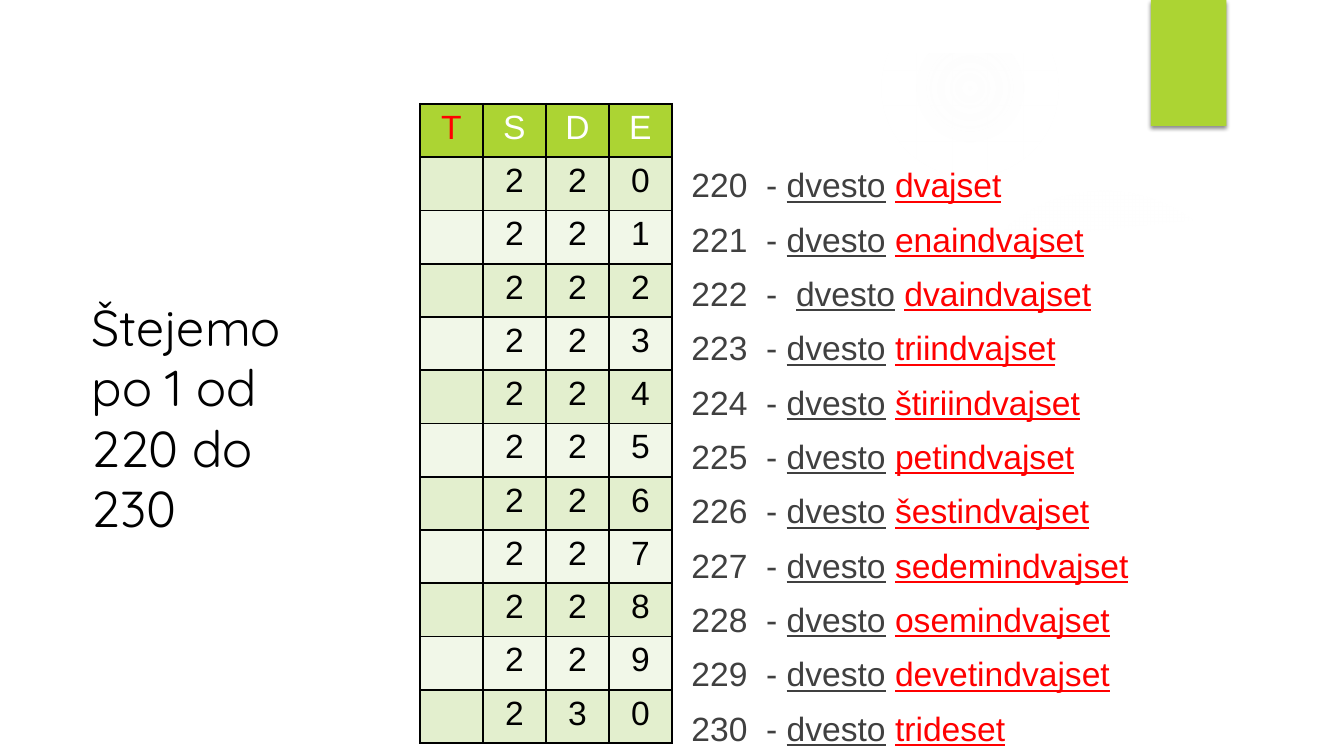
from lxml import etree
from pptx import Presentation
from pptx.dml.color import RGBColor
from pptx.enum import shapes, text
from pptx.oxml import ns
from pptx.util import Pt

GREEN = RGBColor(0xAC, 0xD4, 0x33)
DARK = RGBColor(0xE3, 0xEF, 0xCE)
LIGHT = RGBColor(0xF1, 0xF7, 0xE8)
GLOW = RGBColor(0xF7, 0xF7, 0xF7)
RED = RGBColor(0xFF, 0, 0)
GREY = RGBColor(0x40, 0x40, 0x40)
BLACK = RGBColor(0, 0, 0)
WHITE = RGBColor(0xFF, 0xFF, 0xFF)

FIRST = 220
WORDS = ("dvajset enaindvajset dvaindvajset triindvajset štiriindvajset "
         "petindvajset šestindvajset sedemindvajset osemindvajset "
         "devetindvajset trideset").split()

# Left, top, size; alpha at the centre and at 36 %; where the glow ends
GLOWS = ((0, 210, 330, 11, 10, 75), (0, 228, 186, 8, 8, 72),
         (677.5, 132, 222, 7, 6, 69), (630, 0, 126, 14, 7, 73),
         (677.5, 462, 78, 14, 7, 66))
PANEL = ((36, 147), (36, 504), (924, 504), (924, 147), (864, 156),
         (783.5, 164.9), (703, 170.6), (623.5, 175), (547, 177.5),
         (473, 178.6), (402.5, 177.5), (335.5, 175), (259, 170),
         (179, 163.5), (97, 155))
SLIVER = ((672.5, 180), (760, 174), (850, 162.5), (928, 154), (923.8, 119.5),
          (865.5, 137.5), (798.5, 154), (734.5, 165.5), (669.6, 175))


def add(root, tag, **attrs):
    return etree.SubElement(root, ns.qn("a:" + tag), attrs)


def place(shape, box):
    shape.left, shape.top, shape.width, shape.height = (Pt(n) for n in box)


def style(font, color, size=24, name="Arial"):
    font.name, font.size, font.bold = name, Pt(size), False
    font.color.rgb = color


def paint(shape, color):
    shape.fill.solid()
    shape.fill.fore_color.rgb = color
    shape.line.fill.background()
    shape.shadow.inherit = False


def add_shape(slide, kind, box, color):
    shape = slide.shapes.add_shape(kind, *(Pt(n) for n in box))
    paint(shape, color)
    return shape


def add_outline(slide, points):
    path = [(Pt(x), Pt(y)) for x, y in points]
    pen = slide.shapes.build_freeform(*path[0])
    pen.add_line_segments(path[1:], close=True)
    shape = pen.convert_to_shape()
    paint(shape, WHITE)
    return shape


def draw_glow(slide, left, top, size, core, ring, end):
    disc = add_shape(slide, shapes.MSO_SHAPE.OVAL,
                     (left, top, size, size), GLOW)
    solid = disc.element.spPr.find(ns.qn("a:solidFill"))
    grad = etree.Element(ns.qn("a:gradFill"), rotWithShape="1")
    stops = add(grad, "gsLst")
    for pos, alpha in ((0, core), (36, ring), (end, 0)):
        stop = add(stops, "gs", pos=str(pos * 1000))
        add(add(stop, "srgbClr", val=str(GLOW)), "alpha",
            val=str(alpha * 1000))
    mid = dict.fromkeys("ltrb", "50000")
    add(add(grad, "path", path="circle"), "fillToRect", **mid)
    solid.getparent().replace(solid, grad)


def draw_back(slide, box):
    for glow in GLOWS:
        draw_glow(slide, *glow)
    sliver = add_outline(slide, SLIVER)
    tint = sliver.element.spPr.find(".//" + ns.qn("a:srgbClr"))
    add(tint, "alpha", val="20000")
    add_outline(slide, PANEL)
    frame = add_shape(slide, shapes.MSO_SHAPE.FRAME, box, WHITE)
    frame.adjustments[0] = 0.07


def draw_tab(slide, box):
    tab = add_shape(slide, shapes.MSO_SHAPE.RECTANGLE, box, GREEN)
    effect = tab.element.spPr.find(ns.qn("a:effectLst"))
    shade = add(effect, "outerShdw", blurRad=str(Pt(3)), dist=str(Pt(2)),
                dir="5400000", rotWithShape="0")
    add(add(shade, "srgbClr", val=str(BLACK)), "alpha", val="45000")


def draw_title(slide, box):
    title = slide.shapes.title
    place(title, box)
    frame = title.text_frame
    frame.text = "Štejemo po 1 od 220 do 230"
    frame.word_wrap = True
    frame.auto_size = text.MSO_AUTO_SIZE.NONE
    frame.vertical_anchor = text.MSO_ANCHOR.MIDDLE
    para = frame.paragraphs[0]
    para.alignment = text.PP_ALIGN.LEFT
    para.line_spacing = 1.0
    style(para.runs[0].font, BLACK, 36, "Quicksand")


def drop_bullet(para):
    props = para._p.get_or_add_pPr()
    props.set("marL", "0")
    props.set("indent", "0")
    add(props, "buNone")


def draw_list(slide, box):
    body = slide.placeholders[1]
    place(body, box)
    frame = body.text_frame
    frame.word_wrap = True
    frame.auto_size = text.MSO_AUTO_SIZE.NONE
    frame.vertical_anchor = text.MSO_ANCHOR.TOP
    for i, word in enumerate(WORDS):
        para = frame.add_paragraph() if i else frame.paragraphs[0]
        drop_bullet(para)
        para.space_before = Pt(10 if i else 0)
        dash = "-  " if i == 2 else "- "
        parts = ((f"{FIRST + i}  {dash}", GREY, False),
                 ("dvesto", GREY, True), (" ", GREY, False),
                 (word, RED, True))
        for part, color, under in parts:
            run = para.add_run()
            run.text = part
            style(run.font, color)
            run.font.underline = under


def fill_cell(cell, label, back, color):
    props = cell._tc.get_or_add_tcPr()
    for side in ("lnL", "lnR", "lnT", "lnB"):
        line = add(props, side, w=str(Pt(1.5)))
        add(add(line, "solidFill"), "srgbClr", val=str(BLACK))
    cell.fill.solid()
    cell.fill.fore_color.rgb = back
    cell.text = label
    para = cell.text_frame.paragraphs[0]
    para.alignment = text.PP_ALIGN.CENTER
    for run in para.runs:
        style(run.font, color)


def draw_table(slide, box):
    rows = ["TSDE"] + [f"{FIRST + i:>4}" for i in range(len(WORDS))]
    grid = slide.shapes.add_table(len(rows), 4, *(Pt(n) for n in box)).table
    grid.first_row = grid.horz_banding = False
    for col in grid.columns:
        col.width = Pt(box[2] / 4)
    for r, row in enumerate(rows):
        grid.rows[r].height = Pt(box[3] / len(rows))
        for c, label in enumerate(row):
            if r:
                back, color = DARK if r % 2 else LIGHT, BLACK
            else:
                back, color = GREEN, WHITE if c else RED
            fill_cell(grid.cell(r, c), label.strip(), back, color)


def main():
    deck = Presentation()
    deck.slide_width, deck.slide_height = Pt(960), Pt(540)
    slide = deck.slides.add_slide(deck.slide_layouts[1])
    draw_back(slide, (0, 0, 960, 540))
    draw_tab(slide, (822, 0, 54, 90))
    draw_list(slide, (486.7, 113.8, 690, 269))
    draw_title(slide, (58.3, 270, 168.5, 55.4))
    draw_table(slide, (300, 74.2, 180, 456.6))
    # Text and title stand in front of the backdrop
    for holder in slide.placeholders:
        slide.shapes._spTree.append(holder.element)
    deck.save("out.pptx")


if __name__ == "__main__":
    main()
